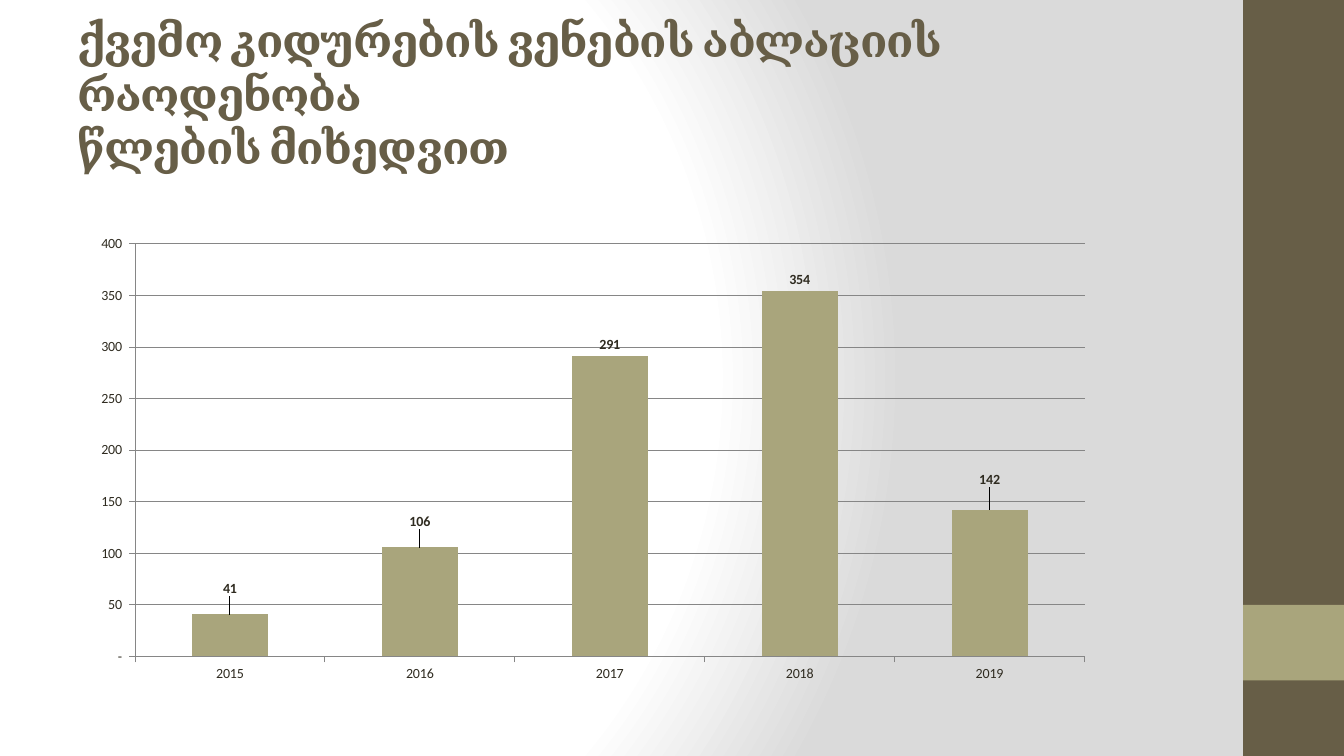
from lxml import etree
from pptx import Presentation
from pptx.chart.data import CategoryChartData
from pptx.dml.color import RGBColor
from pptx.enum.chart import XL_CHART_TYPE, XL_LABEL_POSITION, XL_TICK_MARK
from pptx.enum.shapes import MSO_SHAPE
from pptx.enum.text import MSO_ANCHOR
from pptx.oxml import parse_xml
from pptx.oxml.ns import nsdecls, qn
from pptx.util import Inches, Pt

COLUMN = XL_CHART_TYPE.COLUMN_CLUSTERED
OUTSIDE_END = XL_LABEL_POSITION.OUTSIDE_END
TICK_OUTSIDE = XL_TICK_MARK.OUTSIDE
RECTANGLE = MSO_SHAPE.RECTANGLE
MIDDLE = MSO_ANCHOR.MIDDLE

COLORS = {
    "brown": "675E47",
    "olive": "A9A57C",
    "text": "2F2B20",
    "axis": "868686",
    "white": "FFFFFF",
    "gray": "DADADA",
}
TITLE_LINES = ["ქვემო კიდურების ვენების აბლაციის რაოდენობა ", "წლების მიხედვით"]
PROCEDURES = {"2015": 41, "2016": 106, "2017": 291, "2018": 354, "2019": 142}
LABEL_LIFTS = {0: -0.03, 1: -0.03, 4: -0.04}
NUMBER_FORMAT = '_(* #,##0_);_(* \\(#,##0\\);_(* "-"_);_(@_)'
SIDE_BANDS = [(0, 7.5, "brown"), (6, 0.75, "olive")]
GRADIENT_STOPS = [(0, "white"), (75, "white"), (100, "gray")]
SLIDE_WIDTH, SLIDE_HEIGHT, BAND_WIDTH = 13.33, 7.5, 1


def color(name):
    return RGBColor.from_string(COLORS[name])


def paint_background(slide):
    fill = slide.background.fill
    fill.solid()
    properties = slide.background._cSld.bg.bgPr
    stops = "".join(
        f'<a:gs pos="{position * 1000}"><a:srgbClr val="{COLORS[name]}"/></a:gs>'
        for position, name in GRADIENT_STOPS
    )
    gradient = parse_xml(
        f'<a:gradFill {nsdecls("a")} rotWithShape="1"><a:gsLst>{stops}</a:gsLst>'
        '<a:path path="circle"><a:fillToRect l="20000" t="50000" r="100000" b="50000"/>'
        "</a:path></a:gradFill>"
    )
    properties.replace(properties.find(qn("a:solidFill")), gradient)


def add_side_bands(slide):
    for top, height, name in SIDE_BANDS:
        band = slide.shapes.add_shape(
            RECTANGLE, Inches(SLIDE_WIDTH - BAND_WIDTH), Inches(top),
            Inches(BAND_WIDTH), Inches(height),
        )
        band.shadow.inherit = False
        band.fill.solid()
        band.fill.fore_color.rgb = color(name)
        band.line.fill.background()


def add_title(slide):
    box = slide.shapes.add_textbox(Inches(0.67), Inches(0.3), Inches(11.11), Inches(1.25))
    frame = box.text_frame
    frame.word_wrap = True
    frame.vertical_anchor = MIDDLE
    paragraph = frame.paragraphs[0]
    for index, line in enumerate(TITLE_LINES):
        if index:
            paragraph.add_line_break()
        run = paragraph.add_run()
        run.text = line
        run.font.name = "Cambria"
        run.font.size = Pt(32)
        run.font.bold = True
        run.font.color.rgb = color("brown")
        run.font._element.set("spc", "-100")


def style_axis(axis):
    axis.major_tick_mark = TICK_OUTSIDE
    axis.format.line.color.rgb = color("axis")
    axis.format.line.width = Pt(0.75)


def style_label(label):
    label.position = OUTSIDE_END
    label.font.bold = True
    label.font.size = Pt(10)
    label.font.name = "Calibri"
    label.font.color.rgb = color("text")


def add_procedure_chart(slide):
    data = CategoryChartData(number_format=NUMBER_FORMAT)
    data.categories = list(PROCEDURES)
    data.add_series("Series 1", list(PROCEDURES.values()))
    chart = slide.shapes.add_chart(
        COLUMN, Inches(0.77), Inches(2.25), Inches(10.19), Inches(4.61), data
    ).chart
    chart.has_legend = False
    chart.has_title = False
    chart.font.name = "Calibri"
    chart.font.size = Pt(10)
    chart.font.color.rgb = color("text")

    style_axis(chart.category_axis)
    values = chart.value_axis
    style_axis(values)
    values.minimum_scale, values.maximum_scale, values.major_unit = 0, 400, 50
    values.tick_labels.number_format = NUMBER_FORMAT
    values.tick_labels.number_format_is_linked = False
    values.has_major_gridlines = True
    values.major_gridlines.format.line.color.rgb = color("axis")
    values.major_gridlines.format.line.width = Pt(0.75)

    plot = chart.plots[0]
    plot.gap_width = 150
    plot.vary_by_categories = False
    series = plot.series[0]
    series.format.fill.solid()
    series.format.fill.fore_color.rgb = color("olive")
    labels = series.data_labels
    labels.show_value = True
    labels.number_format = NUMBER_FORMAT
    labels.number_format_is_linked = False
    style_label(labels)
    for index in LABEL_LIFTS:
        style_label(series.points[index].data_label)
    for label, lift in zip(series._element.iter(qn("c:dLbl")), LABEL_LIFTS.values()):
        layout = etree.Element(qn("c:layout"))
        manual = etree.SubElement(layout, qn("c:manualLayout"))
        for axis, offset in (("x", 0), ("y", lift)):
            etree.SubElement(manual, qn(f"c:{axis}")).set("val", str(offset))
        label.insert(1, layout)


def main():
    presentation = Presentation()
    presentation.slide_width = Inches(SLIDE_WIDTH)
    presentation.slide_height = Inches(SLIDE_HEIGHT)
    slide = presentation.slides.add_slide(presentation.slide_layouts[6])
    paint_background(slide)
    add_side_bands(slide)
    add_title(slide)
    add_procedure_chart(slide)
    presentation.save("out.pptx")


if __name__ == "__main__":
    main()
